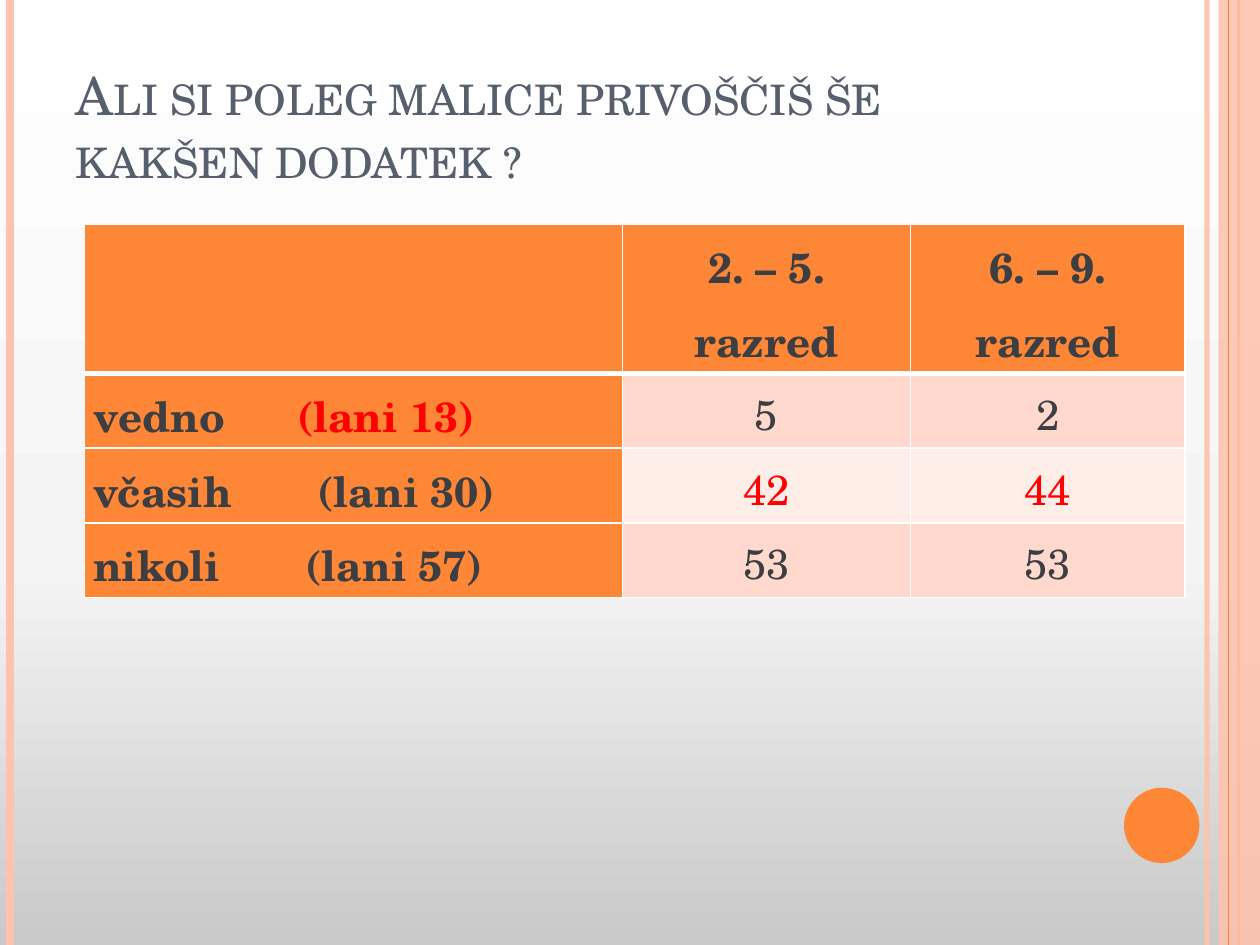
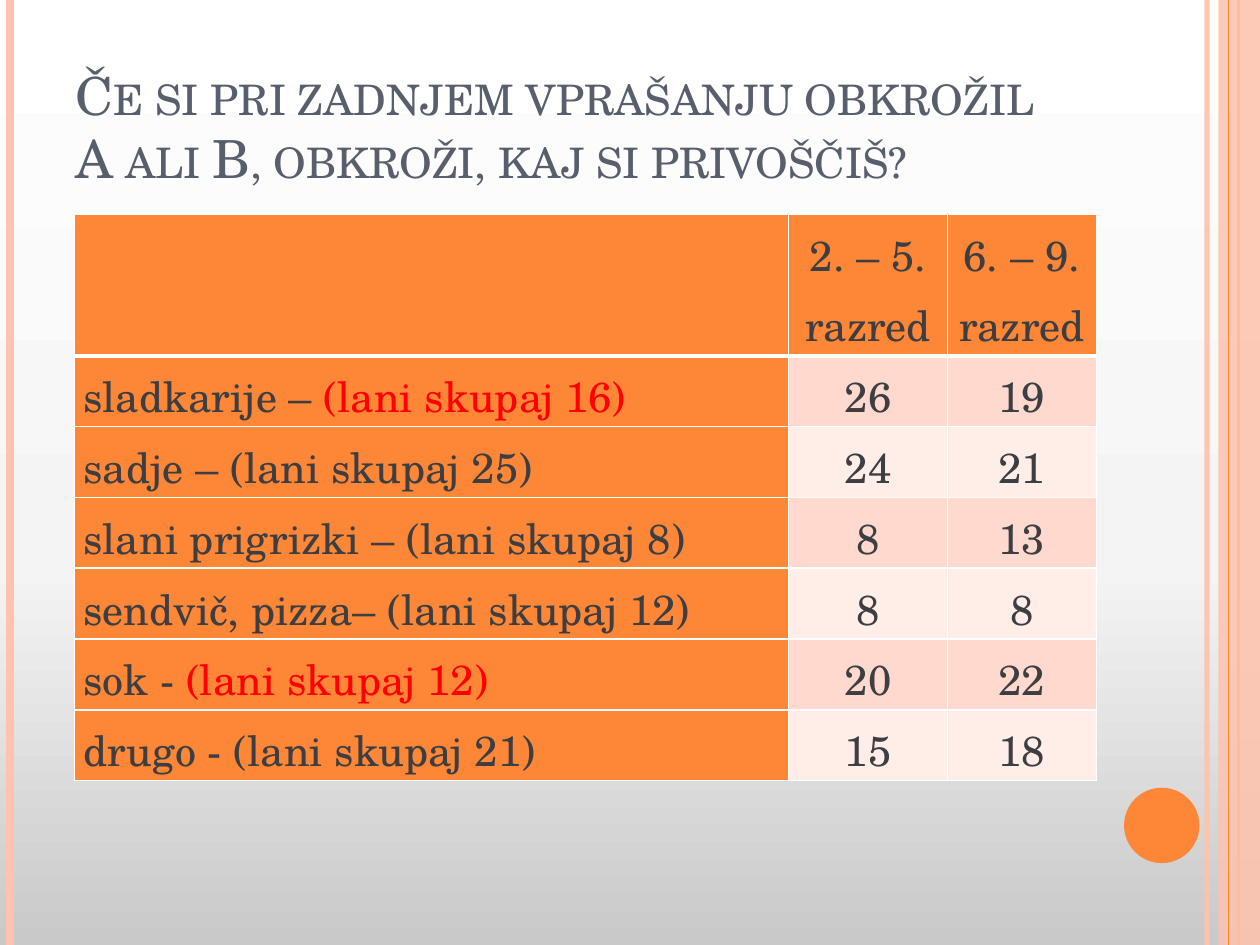
from typing import NamedTuple

from lxml import etree
from pptx import Presentation
from pptx.dml.color import RGBColor
from pptx.enum.shapes import MSO_CONNECTOR as Connector, MSO_SHAPE as Shape
from pptx.enum.text import MSO_ANCHOR as Anchor, MSO_AUTO_SIZE as AutoSize, PP_ALIGN as Align
from pptx.oxml.ns import qn
from pptx.util import Cm, Pt

FONT = "TeX Gyre Schola"
INK, TITLE_INK, RED, WHITE = "3C3E42", "575F6D", "FF0000", "FFFFFF"
ORANGE, PEACH = "FE8637", "FEC3AE"
ROW_FILLS = ["FFD9CE", "FFEDE8"]
BACKGROUND = [(0, "C9C9C9"), (40, "F4F4F4"), (100, "FFFFFF")]
WIDTH, HEIGHT = 25.4, 19.05


class Answer(NamedTuple):
    label: str
    last_year: str
    shares: tuple
    last_year_color: str = INK
    share_color: str = INK
    tab: float = 0


HEADINGS = ["", "2. – 5. razred", "6. – 9. razred"]
SURVEY = [
    {
        "title": "Ali si poleg malice privoščiš še kakšen dodatek ?",
        "place": (1.7, 4.52), "columns": (10.85, 5.8, 5.54),
        "row_height": 1.5, "bold": True,
        "answers": [
            Answer("vedno\t", "(lani 13)", (5, 2), last_year_color=RED, tab=4.11),
            Answer("včasih\t", "(lani 30)", (42, 44), share_color=RED, tab=4.52),
            Answer("nikoli\t", "(lani 57)", (53, 53), tab=4.28),
        ],
    },
    {
        "title": "Če si pri zadnjem vprašanju obkrožil A ali B, obkroži, kaj si privoščiš?",
        "place": (1.5, 4.32), "columns": (14.4, 3.2, 3.0),
        "row_height": 1.42, "bold": False,
        "answers": [
            Answer("sladkarije – ", "(lani skupaj 16)", (26, 19), last_year_color=RED),
            Answer("sadje – ", "(lani skupaj 25)", (24, 21)),
            Answer("slani prigrizki – ", "(lani skupaj 8)", (8, 13)),
            Answer("sendvič, pizza– ", "(lani skupaj 12)", (8, 8)),
            Answer("sok - ", "(lani skupaj 12)", (20, 22), last_year_color=RED),
            Answer("drugo - ", "(lani skupaj 21)", (15, 18)),
        ],
    },
]


def rgb(value):
    return RGBColor.from_string(value)


def add_span(para, text, size=24, color=INK, bold=False, small_caps=False):
    span = para.add_run()
    span.text = text
    font = span.font
    font.name, font.size, font.bold = FONT, Pt(size), bold
    font.color.rgb = rgb(color)
    if small_caps:
        span._r.get_or_add_rPr().set("cap", "small")


def set_opacity(shape, percent):
    color = shape.element.spPr.find(".//" + qn("a:srgbClr"))
    etree.SubElement(color, qn("a:alpha"), val=str(percent * 1000))


def paint_background(master):
    fill = master.background.fill
    fill.gradient()
    fill.gradient_angle = 90
    stops = master.element.find(".//" + qn("a:gsLst"))
    for stop in list(stops):
        stops.remove(stop)
    for percent, color in BACKGROUND:
        stop = etree.SubElement(stops, qn("a:gs"), pos=str(percent * 1000))
        etree.SubElement(stop, qn("a:srgbClr"), val=color)


def add_rule(page, x, color, width, opacity=100):
    """Draw a full-height vertical line."""
    rule = page.shapes.add_connector(Connector.STRAIGHT, Cm(x), 0, Cm(x), Cm(HEIGHT))
    rule.line.color.rgb = rgb(color)
    rule.line.width = Pt(width)
    if opacity < 100:
        set_opacity(rule, opacity)
    etree.SubElement(rule.element.spPr, qn("a:effectLst"))


def add_plain_shape(page, kind, left, top, width, height, color):
    shape = page.shapes.add_shape(kind, Cm(left), Cm(top), Cm(width), Cm(height))
    shape.shadow.inherit = False
    shape.fill.solid()
    shape.fill.fore_color.rgb = rgb(color)
    shape.line.fill.background()
    return shape


def add_side_bands(page):
    add_rule(page, 24.33, PEACH, 3, opacity=93)
    add_rule(page, 0.2, PEACH, 4.5)
    add_rule(page, 24.97, ORANGE, 1.5)
    band = add_plain_shape(page, Shape.RECTANGLE, 24.56, 0, WIDTH - 24.56, HEIGHT, PEACH)
    set_opacity(band, 87)
    add_rule(page, 24.76, ORANGE, 0.75)
    add_plain_shape(page, Shape.OVAL, 22.66, 15.88, 1.52, 1.52, ORANGE)


def set_title(page, text):
    title = page.shapes.title
    title.left, title.top, title.width, title.height = Cm(1.27), Cm(0.76), Cm(20.75), Cm(3.18)
    frame = title.text_frame
    frame.word_wrap = True
    frame.auto_size = AutoSize.NONE
    frame.vertical_anchor = Anchor.BOTTOM
    para = frame.paragraphs[0]
    para.alignment = Align.LEFT
    add_span(para, text, size=30, color=TITLE_INK, small_caps=True)


def add_border(cell, side, width):
    properties = cell._tc.get_or_add_tcPr()
    line = etree.SubElement(properties, qn("a:ln" + side), w=str(Pt(width)))
    fill = etree.SubElement(line, qn("a:solidFill"))
    etree.SubElement(fill, qn("a:srgbClr"), val=WHITE)


def format_cell(cell, row, fill):
    cell.margin_left = cell.margin_right = Cm(0.18)
    cell.margin_top = cell.margin_bottom = 0
    widths = {"L": 1, "R": 1, "T": 3 if row == 1 else 1, "B": 3 if row == 0 else 1}
    for side, width in widths.items():
        add_border(cell, side, width)
    cell.fill.solid()
    cell.fill.fore_color.rgb = rgb(fill)


def write_cell(cell, spans, align, bold=False, tab=0):
    para = cell.text_frame.paragraphs[0]
    if tab:
        tabs = etree.SubElement(para._p.get_or_add_pPr(), qn("a:tabLst"))
        etree.SubElement(tabs, qn("a:tab"), pos=str(Cm(tab)), algn="l")
    para.alignment = align
    para.line_spacing = 1.15
    for text, color in spans:
        add_span(para, text, color=color, bold=bold)


def add_answers(page, question):
    answers, columns = question["answers"], question["columns"]
    bold, row_height = question["bold"], question["row_height"]
    left, top = question["place"]
    heights = [2 * row_height] + [row_height] * len(answers)
    table = page.shapes.add_table(len(heights), len(columns), Cm(left), Cm(top),
                                  Cm(sum(columns)), Cm(sum(heights))).table
    table.first_row = table.horz_banding = False
    for column, width in zip(table.columns, columns):
        column.width = Cm(width)
    for number, height in enumerate(heights):
        table.rows[number].height = Cm(height)
        for column in range(len(columns)):
            is_heading = number == 0 or column == 0
            fill = ORANGE if is_heading else ROW_FILLS[(number - 1) % 2]
            format_cell(table.cell(number, column), number, fill)

    for column, heading in enumerate(HEADINGS):
        if heading:
            write_cell(table.cell(0, column), [(heading, INK)], Align.CENTER, bold)
    for number, answer in enumerate(answers, start=1):
        label = [(answer.label, INK), (answer.last_year, answer.last_year_color)]
        write_cell(table.cell(number, 0), label, Align.LEFT, bold, answer.tab)
        for column, share in enumerate(answer.shares, start=1):
            write_cell(table.cell(number, column), [(str(share), answer.share_color)],
                       Align.CENTER)


def main():
    deck = Presentation()
    deck.slide_width, deck.slide_height = Cm(WIDTH), Cm(HEIGHT)
    paint_background(deck.slide_master)
    title_only = deck.slide_layouts[5]
    for question in SURVEY:
        page = deck.slides.add_slide(title_only)
        add_side_bands(page)
        set_title(page, question["title"])
        add_answers(page, question)
    deck.save("out.pptx")


if __name__ == "__main__":
    main()
